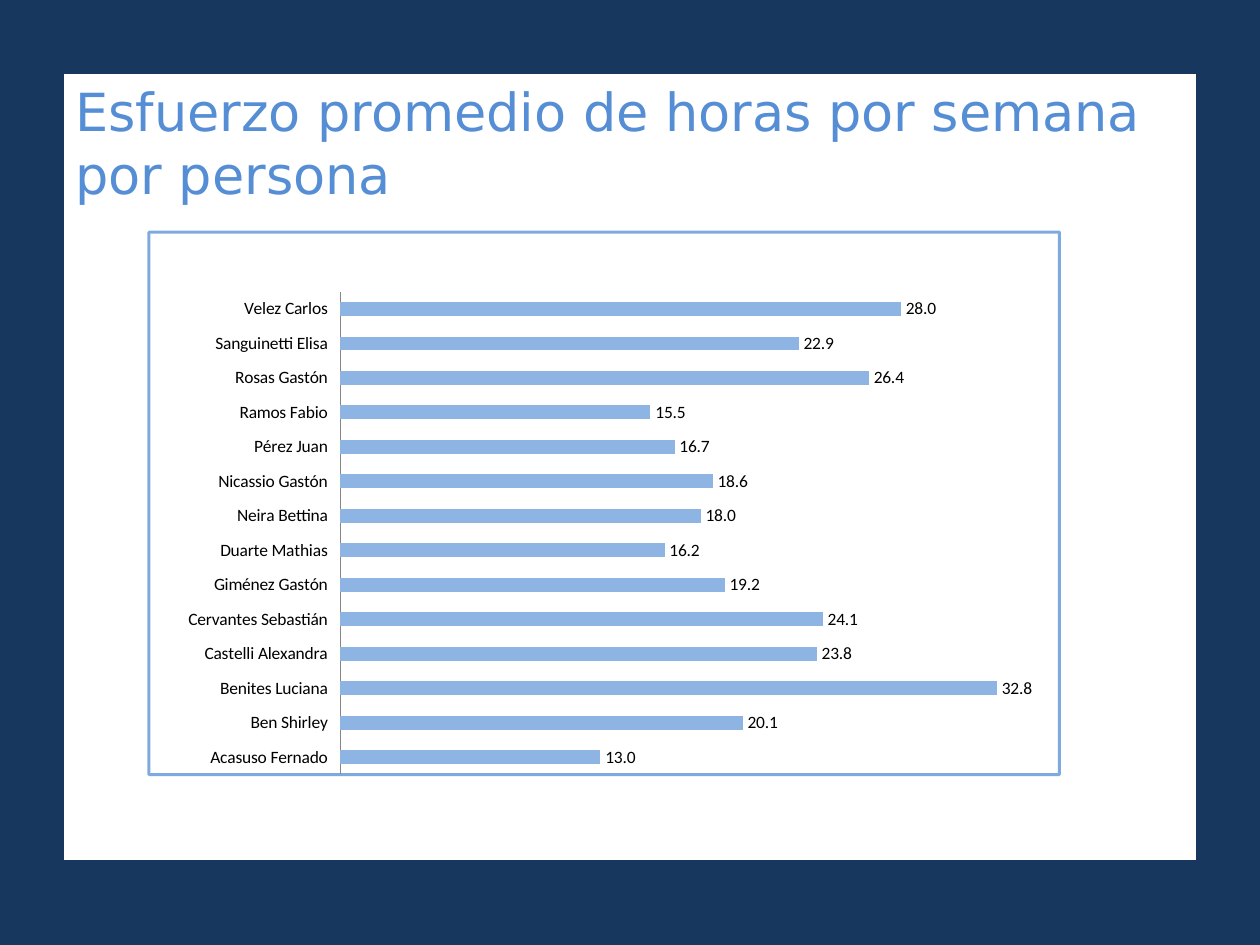
from dataclasses import dataclass
from typing import NamedTuple

from pptx import Presentation
from pptx.chart.chart import Chart
from pptx.chart.data import CategoryChartData
from pptx.dml.color import RGBColor
from pptx.enum.chart import XL_CHART_TYPE as ChartType
from pptx.enum.chart import XL_LABEL_POSITION as LabelPos
from pptx.enum.chart import XL_TICK_LABEL_POSITION as TickLabelPos
from pptx.enum.chart import XL_TICK_MARK as TickMark
from pptx.enum.shapes import MSO_SHAPE as Shape
from pptx.enum.text import MSO_ANCHOR as Anchor
from pptx.enum.text import PP_ALIGN as Align
from pptx.oxml import parse_xml
from pptx.oxml.ns import nsdecls, qn
from pptx.slide import Slide
from pptx.util import Inches, Pt


@dataclass(frozen=True)
class Theme:
    navy: str = "17375E"
    panel: str = "FFFFFF"
    accent: str = "558ED5"
    bar: str = "8EB4E3"
    axis: str = "868686"
    text: str = "000000"
    title_font: str = "DejaVu Sans"
    chart_font: str = "Calibri"
    title_size: int = 30
    chart_size: int = 10


class Effort(NamedTuple):
    person: str
    hours: float


class Box(NamedTuple):
    left: float
    top: float
    width: float
    height: float

    def inches(self) -> list[Inches]:
        return [Inches(v) for v in self]


THEME = Theme()
TITLE = "Esfuerzo promedio de horas por semana por persona"
PANEL = Box(0.5, 0.58, 9, 6.25)
CHART = Box(1.17, 1.83, 7.25, 4.33)
PLOT = Box(0.21, 0.11, 0.77, 0.89)  # fractions of the chart
EFFORTS = [
    Effort("Acasuso Fernado", 13),
    Effort("Ben Shirley", 20.1),
    Effort("Benites Luciana", 32.8),
    Effort("Castelli Alexandra", 23.8),
    Effort("Cervantes Sebastián", 24.1),
    Effort("Giménez Gastón", 19.2),
    Effort("Duarte Mathias", 16.2),
    Effort("Neira Bettina", 18),
    Effort("Nicassio Gastón", 18.6),
    Effort("Pérez Juan", 16.7),
    Effort("Ramos Fabio", 15.5),
    Effort("Rosas Gastón", 26.4),
    Effort("Sanguinetti Elisa", 22.9),
    Effort("Velez Carlos", 28),
]


def rgb(color: str) -> RGBColor:
    return RGBColor.from_string(color)


def add_title_panel(s: Slide) -> None:
    sp = s.shapes.add_shape(Shape.RECTANGLE, *PANEL.inches())
    sp.shadow.inherit = False
    sp.fill.solid()
    sp.fill.fore_color.rgb = rgb(THEME.panel)
    sp.line.color.rgb = rgb(THEME.navy)
    sp.line.width = Pt(0.75)
    tf = sp.text_frame
    tf.word_wrap = True
    tf.vertical_anchor = Anchor.TOP
    p = tf.paragraphs[0]
    p.alignment = Align.LEFT
    r = p.add_run()
    r.text = TITLE
    r.font.name = THEME.title_font
    r.font.size = Pt(THEME.title_size)
    r.font.color.rgb = rgb(THEME.accent)


def place_plot(chart: Chart, box: Box) -> None:
    """Fix the inner plot area at fractions of the chart."""
    area = chart.element.chart.plotArea
    for old in area.findall(qn("c:layout")):
        area.remove(old)
    modes = '<c:xMode val="edge"/><c:yMode val="edge"/>'
    sizes = "".join(f'<c:{k} val="{v}"/>' for k, v in zip("xywh", box))
    area.insert(0, parse_xml(
        f'<c:layout {nsdecls("c")}><c:manualLayout>'
        f'<c:layoutTarget val="inner"/>{modes}{sizes}'
        '</c:manualLayout></c:layout>'))


def frame_chart(chart: Chart) -> None:
    """Give the chart a translucent border."""
    chart.element.chart.addnext(parse_xml(
        f'<c:spPr {nsdecls("c", "a")}><a:noFill/><a:ln w="{Pt(1.75)}">'
        f'<a:solidFill><a:srgbClr val="{THEME.accent}">'
        '<a:alpha val="74000"/></a:srgbClr></a:solidFill></a:ln></c:spPr>'))


def add_effort_chart(s: Slide) -> None:
    data = CategoryChartData(number_format="0.0")
    data.categories = [e.person for e in EFFORTS]
    data.add_series("Series 1", [e.hours for e in EFFORTS])
    chart = s.shapes.add_chart(
        ChartType.BAR_CLUSTERED, *CHART.inches(), data).chart
    chart.has_title = False
    chart.has_legend = False
    chart.font.name = THEME.chart_font
    chart.font.size = Pt(THEME.chart_size)
    chart.font.color.rgb = rgb(THEME.text)

    people = chart.category_axis
    people.major_tick_mark = people.minor_tick_mark = TickMark.NONE
    people.tick_label_position = TickLabelPos.LOW
    people.format.line.color.rgb = rgb(THEME.axis)
    people.format.line.width = Pt(0.75)
    hours = chart.value_axis
    hours.minimum_scale, hours.maximum_scale = 0, 35
    hours.has_major_gridlines = False
    hours.visible = False

    plot = chart.plots[0]
    plot.gap_width = 150
    plot.vary_by_categories = False
    fill = plot.series[0].format.fill
    fill.solid()
    fill.fore_color.rgb = rgb(THEME.bar)
    labels = plot.series[0].data_labels
    labels.show_value = True
    labels.number_format = "0.0"
    labels.number_format_is_linked = False
    labels.position = LabelPos.OUTSIDE_END

    place_plot(chart, PLOT)
    frame_chart(chart)


def main() -> None:
    prs = Presentation()
    prs.slide_width, prs.slide_height = Inches(10), Inches(7.5)
    s = prs.slides.add_slide(prs.slide_layouts[6])
    s.background.fill.solid()
    s.background.fill.fore_color.rgb = rgb(THEME.navy)
    add_title_panel(s)
    add_effort_chart(s)
    prs.save("out.pptx")


if __name__ == "__main__":
    main()
